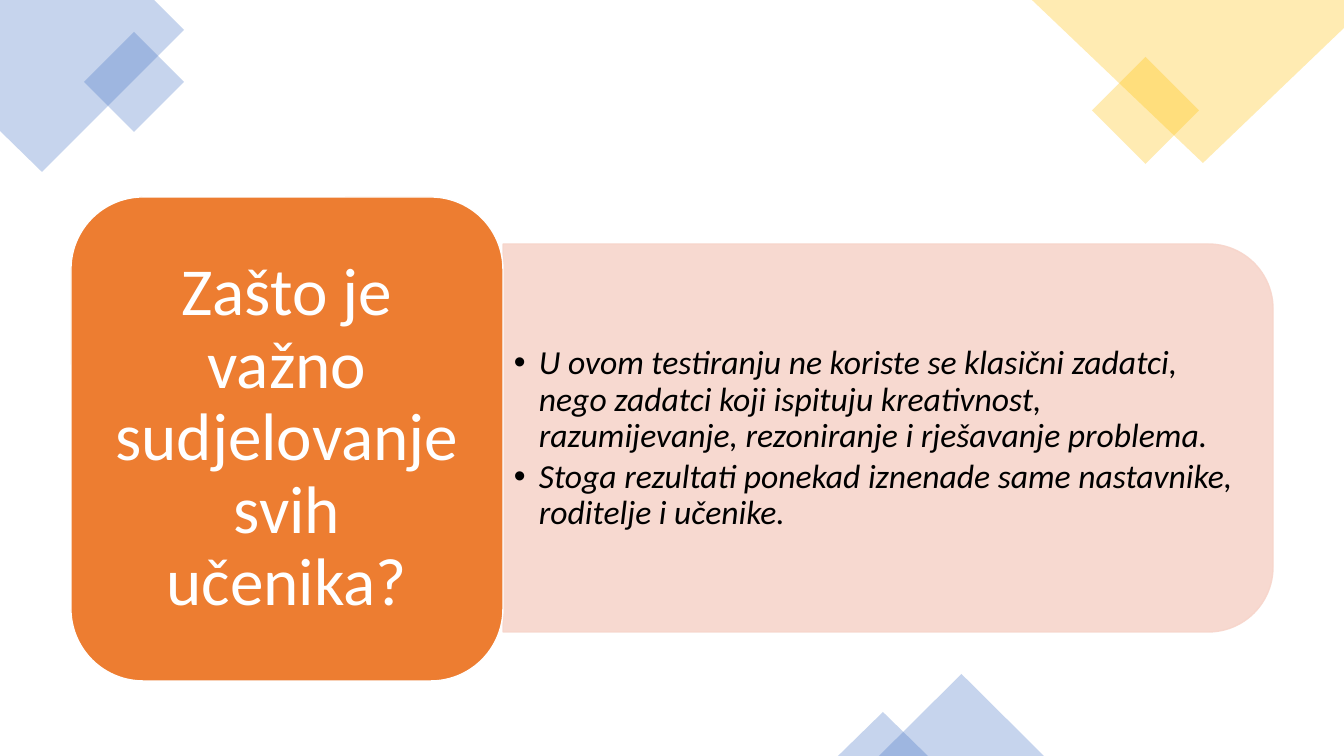
from lxml import etree
from pptx import Presentation
from pptx.dml.color import RGBColor
from pptx.enum.shapes import MSO_SHAPE
from pptx.enum.text import MSO_ANCHOR, PP_ALIGN
from pptx.oxml.ns import qn
from pptx.util import Emu, Pt

# Content
QUESTION = "Zašto je važno sudjelovanje svih učenika?"
ANSWERS = [
    "U ovom testiranju ne koriste se klasični zadatci, nego zadatci koji ispituju "
    "kreativnost, razumijevanje, rezoniranje i rješavanje problema.",
    "Stoga rezultati ponekad iznenade same nastavnike, roditelje i učenike.",
]
COLORS = {"blue": "4472C4", "yellow": "FFC000", "panel": "F7D5CB",
          "card": "ED7D31", "white": "FFFFFF", "black": "000000"}
FONT = "Calibri"

# Shape kinds and alignment
DIAMOND = MSO_SHAPE.DIAMOND
TRIANGLE = MSO_SHAPE.ISOSCELES_TRIANGLE
ROUNDED = MSO_SHAPE.ROUNDED_RECTANGLE
ROUNDED_TOP = MSO_SHAPE.ROUND_2_SAME_RECTANGLE
MIDDLE = MSO_ANCHOR.MIDDLE
CENTER = PP_ALIGN.CENTER

# Layout in px: left, top, width, height
SLIDE = (1344, 756)
CORNERS = [
    ("blue", [(0, 0), (154, 0), (184, 30), (42, 172), (0, 131)]),
    ("yellow", [(1032, 0), (1344, 0), (1344, 28), (1203, 163)]),
]
ORNAMENTS = [
    (DIAMOND, "blue", (84, 32, 100, 100)),
    (DIAMOND, "yellow", (1092, 57, 107, 107)),
    (TRIANGLE, "blue", (879, 674, 165, 82)),
    (TRIANGLE, "blue", (838, 712, 90, 44)),
]
PANEL = (503, 244, 770, 388)
ANSWER_BOX = (504, 264, 750, 350)
CARD = (71, 197, 432, 484)
CARD_INSET = (18, 10)  # added to the inset of the rounded corners
BULLET_INDENT = 25
ROUNDING = 0.167
PX = 914400 / 100.8


def px(length):
    return Emu(round(length * PX))


def paint(shape, color, opacity=100, outline=None):
    shape.shadow.inherit = False
    shape.fill.solid()
    shape.fill.fore_color.rgb = RGBColor.from_string(COLORS[color])
    if outline:
        shape.line.color.rgb = RGBColor.from_string(COLORS[outline])
        shape.line.width = Pt(1)
    else:
        shape.line.fill.background()
    if opacity < 100:
        for tint in shape._element.spPr.iter(qn("a:srgbClr")):
            etree.SubElement(tint, qn("a:alpha")).set("val", str(opacity * 1000))


def add_shape(kind, box):
    return slide.shapes.add_shape(kind, *map(px, box))


def style(paragraph, size, color, italic=False):
    paragraph.line_spacing = 0.9
    for run in paragraph.runs:
        run.font.name = FONT
        run.font.size = Pt(size)
        run.font.italic = italic
        run.font.color.rgb = RGBColor.from_string(COLORS[color])


def add_bullet(paragraph):
    props = paragraph._p.get_or_add_pPr()
    props.set("marL", str(px(BULLET_INDENT)))
    props.set("indent", str(-px(BULLET_INDENT)))
    etree.SubElement(props, qn("a:buFont")).set("typeface", "Arial")
    etree.SubElement(props, qn("a:buChar")).set("char", "•")


prs = Presentation()
prs.slide_width, prs.slide_height = map(px, SLIDE)
slide = prs.slides.add_slide(prs.slide_layouts[6])

# Corner decorations
for color, points in CORNERS:
    outline = slide.shapes.build_freeform(*points[0], scale=PX)
    outline.add_line_segments(points[1:], close=True)
    paint(outline.convert_to_shape(), color, 30)
for kind, color, box in ORNAMENTS:
    paint(add_shape(kind, box), color, 30)

# Answer panel: an upright shape turned about its centre
left, top, width, height = PANEL
panel = add_shape(ROUNDED_TOP,
                  (left + (width - height) / 2, top + (height - width) / 2, height, width))
panel.rotation = 90
panel.adjustments[0] = ROUNDING
panel.adjustments[1] = 0
paint(panel, "panel", 90, "panel")

# Answers
answers = slide.shapes.add_textbox(*map(px, ANSWER_BOX)).text_frame
answers.word_wrap = True
answers.vertical_anchor = MIDDLE
answers.text = "\n".join(ANSWERS)
for paragraph in answers.paragraphs:
    style(paragraph, 24, "black", italic=True)
    add_bullet(paragraph)
answers.paragraphs[1].space_before = Pt(3.6)

# Question card
card = add_shape(ROUNDED, CARD)
card.adjustments[0] = ROUNDING
paint(card, "card", outline="white")
question = card.text_frame
question.word_wrap = True
question.vertical_anchor = MIDDLE
question.margin_left = question.margin_right = px(CARD_INSET[0])
question.margin_top = question.margin_bottom = px(CARD_INSET[1])
question.text = QUESTION
question.paragraphs[0].alignment = CENTER
style(question.paragraphs[0], 48, "white")

prs.save("out.pptx")
